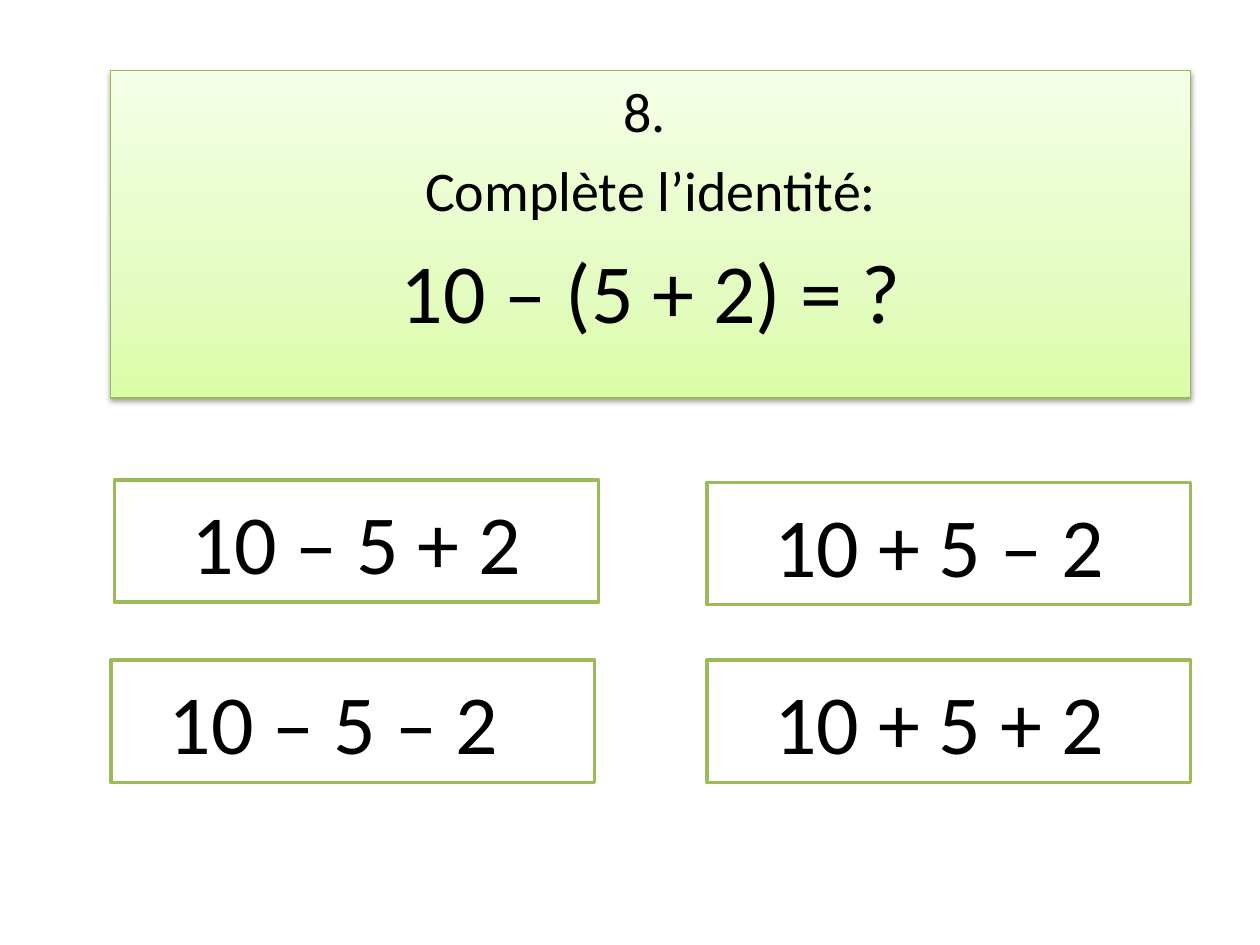
import copy
from dataclasses import dataclass

from lxml import etree
from pptx import Presentation
from pptx import util as u
from pptx.dml.color import RGBColor
from pptx.enum import shapes, text
from pptx.oxml import ns


@dataclass
class Theme:
    font: str = "Calibri"
    ink: str = "000000"
    paper: str = "FFFFFF"
    answer_line: str = "9BBB59"
    question_line: str = "98B955"
    gradient: tuple = ((0, "DAFDA7"), (0.35, "E4FCC2"), (1, "F5FFE7"))
    label_size: int = 32
    formula_size: int = 48


theme = Theme()


def add_box(left, top, width, height, line_color, line_width):
    box = page.shapes.add_shape(
        shapes.MSO_SHAPE.RECTANGLE,
        u.Inches(left), u.Inches(top), u.Inches(width), u.Inches(height))
    box.shadow.inherit = False
    box.line.color.rgb = RGBColor.from_string(line_color)
    box.line.width = u.Pt(line_width)
    box.text_frame.word_wrap = True
    return box


def write_line(para, words, size):
    para.alignment = text.PP_ALIGN.CENTER
    span = para.add_run()
    span.text = words
    span.font.name = theme.font
    span.font.size = u.Pt(size)
    span.font.color.rgb = RGBColor.from_string(theme.ink)


deck = Presentation()
deck.slide_width, deck.slide_height = u.Inches(10), u.Inches(7.5)
page = deck.slides.add_slide(deck.slide_layouts[6])

# Question panel with a three-stop gradient, palest at the top
question = add_box(0.88, 0.56, 8.57, 2.6, theme.question_line, 0.75)
question.fill.gradient()
question.fill.gradient_angle = 90
stop_list = question._element.spPr.find(".//" + ns.qn("a:gsLst"))
stop_list.insert(1, copy.deepcopy(stop_list[0]))
for stop, (position, color) in zip(question.fill.gradient_stops, theme.gradient):
    stop.color.rgb = RGBColor.from_string(color)
    stop.position = position

# Soft shadow below the panel
effects = question._element.spPr.find(ns.qn("a:effectLst"))
shadow = etree.SubElement(effects, ns.qn("a:outerShdw"), blurRad="40000",
                          dist="20000", dir="5400000", rotWithShape="0")
shade = etree.SubElement(shadow, ns.qn("a:srgbClr"), val=theme.ink)
etree.SubElement(shade, ns.qn("a:alpha"), val="38000")

# Question text, each later line spaced by a fifth of its size
frame = question.text_frame
frame.vertical_anchor = text.MSO_ANCHOR.TOP
question_lines = [
    ("8. ", theme.label_size),
    ("Complète l’identité:", theme.label_size),
    ("10 – (5 + 2) = ?", theme.formula_size),
]
for index, (words, size) in enumerate(question_lines):
    para = frame.add_paragraph() if index else frame.paragraphs[0]
    if index:
        para.space_before = u.Pt(size * 0.2)
    write_line(para, words, size)

# Four answers; the right inset shifts the centred text to the left
answers = [
    ("10 – 5 + 2", 0.91, 3.81, 0.1),
    ("10 + 5 – 2", 5.61, 3.83, 0.25),
    ("10 – 5 – 2", 0.88, 5.24, 0.4),
    ("10 + 5 + 2", 5.61, 5.24, 0.25),
]
for words, left, top, right_inset in answers:
    answer = add_box(left, top, 3.84, 0.97, theme.answer_line, 2)
    answer.fill.solid()
    answer.fill.fore_color.rgb = RGBColor.from_string(theme.paper)
    answer.text_frame.vertical_anchor = text.MSO_ANCHOR.MIDDLE
    answer.text_frame.margin_right = u.Inches(right_inset)
    write_line(answer.text_frame.paragraphs[0], words, theme.formula_size)

deck.save("out.pptx")
